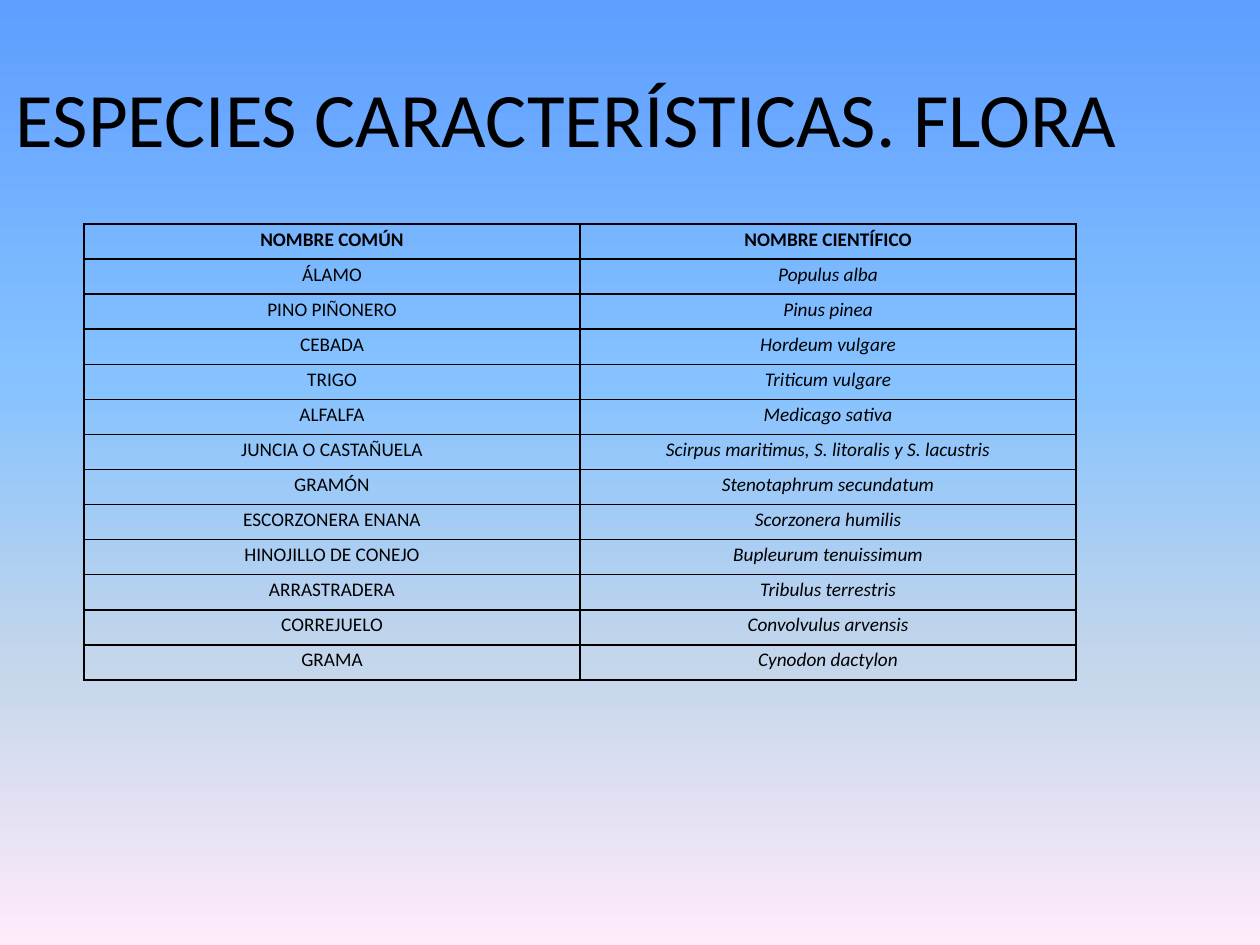
from lxml import etree
from pptx import Presentation
from pptx.dml.color import RGBColor
from pptx.enum import text
from pptx.oxml.ns import qn
from pptx.util import Pt

FONT = "Calibri"
BLACK = "000000"
SKY = [(0, "5E9EFF"), (40, "85C2FF"), (70, "C4D6EB"), (100, "FFEBFA")]
SPECIES = [
    ("NOMBRE COMÚN", "NOMBRE CIENTÍFICO"),
    ("ÁLAMO", "Populus alba"),
    ("PINO PIÑONERO", "Pinus pinea"),
    ("CEBADA", "Hordeum vulgare"),
    ("TRIGO", "Triticum vulgare"),
    ("ALFALFA", "Medicago sativa"),
    ("JUNCIA O CASTAÑUELA", "Scirpus maritimus, S. litoralis y S. lacustris"),
    ("GRAMÓN", "Stenotaphrum secundatum"),
    ("ESCORZONERA ENANA", "Scorzonera humilis"),
    ("HINOJILLO DE CONEJO", "Bupleurum tenuissimum"),
    ("ARRASTRADERA", "Tribulus terrestris"),
    ("CORREJUELO", "Convolvulus arvensis"),
    ("GRAMA", "Cynodon dactylon"),
]


def color(value):
    return RGBColor.from_string(value)


def add_solid(parent, value):
    fill = etree.SubElement(parent, qn("a:solidFill"))
    etree.SubElement(fill, qn("a:srgbClr"), val=value)


def write(frame, words, size, bold=False, italic=False):
    para = frame.paragraphs[0]
    para.text = words
    para.alignment = text.PP_ALIGN.CENTER
    font = para.font
    font.name, font.size = FONT, Pt(size)
    font.bold, font.italic = bold, italic
    font.color.rgb = color(BLACK)
    return para


def paint_background(page):
    fill = page.background.fill
    fill.gradient()
    fill.gradient_angle = 270
    stops = page._element.find(".//" + qn("a:gsLst"))
    for stop in list(stops):
        stops.remove(stop)
    for position, value in SKY:
        stop = etree.SubElement(stops, qn("a:gs"), pos=str(position * 1000))
        etree.SubElement(stop, qn("a:srgbClr"), val=value)


def add_title(page, left, top, width, height):
    box = page.shapes.add_textbox(Pt(left), Pt(top), Pt(width), Pt(height))
    frame = box.text_frame
    frame.word_wrap = True
    frame.vertical_anchor = text.MSO_ANCHOR.MIDDLE
    write(frame, "ESPECIES CARACTERÍSTICAS. FLORA", 44)


def style_cell(cell):
    cell.margin_left = cell.margin_right = Pt(5)
    cell.margin_top = cell.margin_bottom = Pt(0)
    # Borders come before the fill in the cell properties
    properties = cell._tc.get_or_add_tcPr()
    for side in ("lnL", "lnR", "lnT", "lnB"):
        line = etree.SubElement(properties, qn("a:" + side), w=str(Pt(1)))
        add_solid(line, BLACK)
    cell.fill.background()


def add_species_table(page, left, top, width, height):
    count = len(SPECIES)
    table = page.shapes.add_table(
        count, 2, Pt(left), Pt(top), Pt(width), Pt(height)).table
    table.horz_banding = False
    for column in table.columns:
        column.width = Pt(width / 2)
    for row_index, names in enumerate(SPECIES):
        table.rows[row_index].height = Pt(height / count)
        header = row_index == 0
        for column_index, name in enumerate(names):
            cell = table.cell(row_index, column_index)
            style_cell(cell)
            para = write(cell.text_frame, name, 11, bold=header,
                         italic=column_index == 1)
            para.line_spacing = 1.15
            if header:
                para.font.italic = False


def main():
    deck = Presentation()
    deck.slide_width, deck.slide_height = Pt(720), Pt(540)
    page = deck.slides.add_slide(deck.slide_layouts[6])
    paint_background(page)
    add_title(page, 0, 21.6, 648, 90)
    add_species_table(page, 48, 128, 567, 260.8)
    deck.save("out.pptx")


if __name__ == "__main__":
    main()
